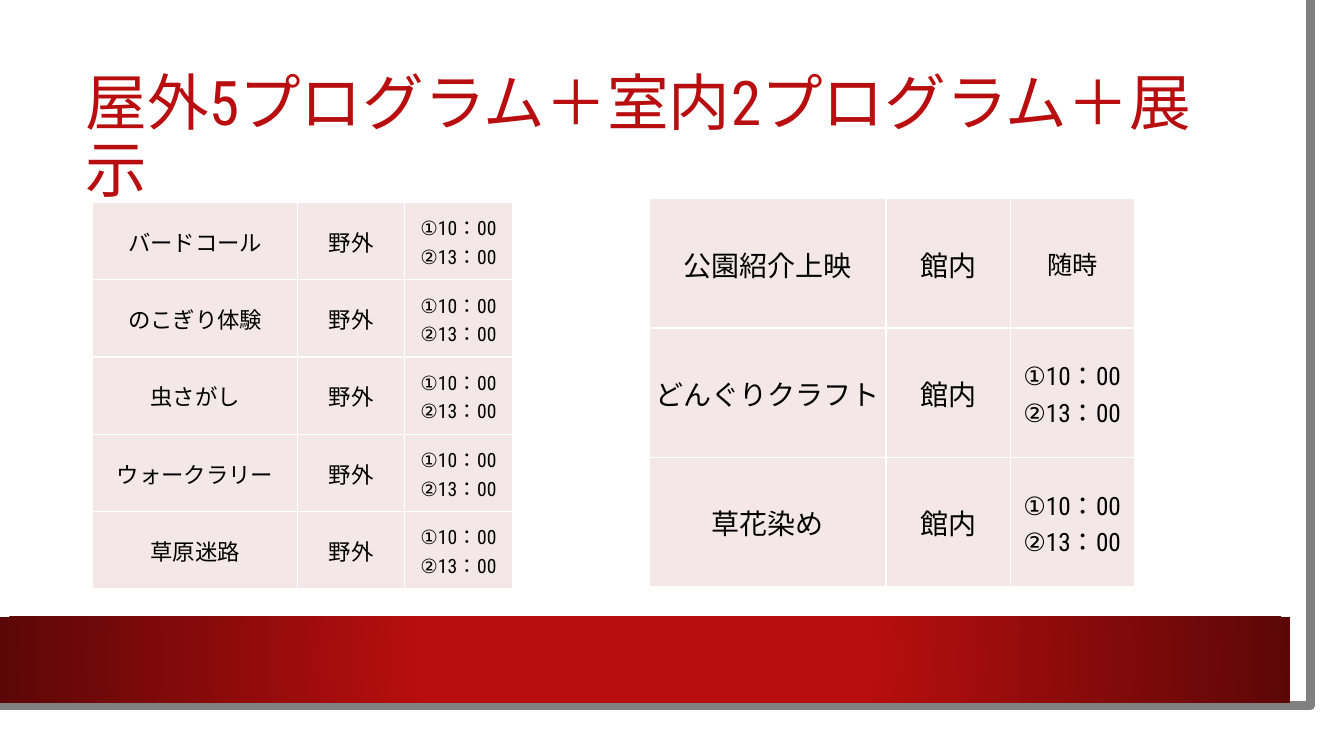
import pptx
import pptx.util
import pptx.dml.color
import pptx.enum.lang
import pptx.enum.shapes
import pptx.enum.text
import pptx.oxml
import pptx.oxml.ns
import lxml.etree

LATIN_FONT = "Roboto Condensed"
JAPANESE_FONT = "Noto Sans CJK JP"
RED, DARK_RED, GRAY = "B80E0F", "5C0707", "808080"
CELL_FILL, WHITE, BLACK = "F3E7E7", "FFFFFF", "000000"
COLUMN_SHARES = (0.488, 0.256, 0.256)
TIMES = "①10：00\v②13：00"
OUTDOOR = [
    (name, "野外", TIMES)
    for name in ("バードコール", "のこぎり体験", "虫さがし", "ウォークラリー", "草原迷路")
]
INDOOR = [
    ("公園紹介上映", "館内", "随時"),
    ("どんぐりクラフト", "館内", TIMES),
    ("草花染め", "館内", TIMES),
]


def inches(*lengths):
    return [pptx.util.Inches(length) for length in lengths]


def color(value):
    return pptx.dml.color.RGBColor.from_string(value)


def format_runs(paragraph, size, font_name, font_color):
    for run in paragraph.runs:
        run.font.size = pptx.util.Pt(size)
        run.font.name = font_name
        run.font.color.rgb = color(font_color)
        run.font.language_id = pptx.enum.lang.MSO_LANGUAGE_ID.JAPANESE
        latin = run.font._element.find(pptx.oxml.ns.qn("a:latin"))
        east_asian = lxml.etree.Element(pptx.oxml.ns.qn("a:ea"), typeface=JAPANESE_FONT)
        latin.addnext(east_asian)


def add_rectangle(slide, box):
    shape = slide.shapes.add_shape(
        pptx.enum.shapes.MSO_SHAPE.RECTANGLE, *inches(*box)
    )
    shape.shadow.inherit = False
    shape.line.fill.background()
    return shape


def add_paper(slide, box):
    paper = add_rectangle(slide, box)
    paper.fill.solid()
    paper.fill.fore_color.rgb = color(WHITE)


def add_paper_edge(slide, box):
    left, top, width, height = box
    right, bottom = left + width, top + height
    builder = slide.shapes.build_freeform(right - 0.03, top, scale=914400)
    builder.add_line_segments([(right, bottom), (left, bottom - 0.01)], close=False)
    edge = builder.convert_to_shape()
    edge.shadow.inherit = False
    edge.fill.background()
    edge.line.color.rgb = color(GRAY)
    edge.line.width = pptx.util.Pt(6.5)


def add_band(slide, box):
    band = add_rectangle(slide, box)
    band.fill.gradient()
    stops = ((0.34, RED), (1, DARK_RED))
    for stop, (position, value) in zip(band.fill.gradient_stops, stops):
        stop.position = position
        stop.color.rgb = color(value)
    linear = band._element.spPr.find(".//" + pptx.oxml.ns.qn("a:lin"))
    radial = pptx.oxml.parse_xml(
        f'<a:path {pptx.oxml.ns.nsdecls("a")} path="circle">'
        '<a:fillToRect l="50000" t="50000" r="50000" b="50000"/></a:path>'
    )
    linear.getparent().replace(linear, radial)


def add_title(slide, box, text):
    title = slide.shapes.add_textbox(*inches(*box))
    frame = title.text_frame
    frame.word_wrap = True
    frame.vertical_anchor = pptx.enum.text.MSO_ANCHOR.MIDDLE
    frame.text = text
    paragraph = frame.paragraphs[0]
    paragraph.line_spacing = 0.9
    format_runs(paragraph, 44, LATIN_FONT, RED)


def add_borders(cell):
    properties = cell._tc.get_or_add_tcPr()
    for index, side in enumerate(("lnL", "lnR", "lnT", "lnB")):
        border = pptx.oxml.parse_xml(
            f'<a:{side} {pptx.oxml.ns.nsdecls("a")} w="12700"><a:solidFill>'
            f'<a:srgbClr val="{WHITE}"/></a:solidFill></a:{side}>'
        )
        properties.insert(index, border)


def fill_cell(cell, text, size, font_name):
    cell.fill.solid()
    cell.fill.fore_color.rgb = color(CELL_FILL)
    cell.margin_left = cell.margin_right = cell.margin_top = pptx.util.Inches(0.01)
    cell.margin_bottom = 0
    cell.vertical_anchor = pptx.enum.text.MSO_ANCHOR.MIDDLE
    paragraph = cell.text_frame.paragraphs[0]
    paragraph.text = text
    paragraph.alignment = pptx.enum.text.PP_ALIGN.CENTER
    format_runs(paragraph, size, font_name, BLACK)
    add_borders(cell)


def add_program_table(slide, box, programs, name_size, time_size):
    width, height = box[2:]
    table = slide.shapes.add_table(
        len(programs), len(COLUMN_SHARES), *inches(*box)
    ).table
    table.first_row = False
    table.horz_banding = False
    for column, share in zip(table.columns, COLUMN_SHARES):
        column.width = pptx.util.Inches(width * share)
    styles = (
        (name_size, JAPANESE_FONT),
        (name_size, JAPANESE_FONT),
        (time_size, LATIN_FONT),
    )
    for row, program in zip(table.rows, programs):
        row.height = pptx.util.Inches(height / len(programs))
        for cell, text, style in zip(row.cells, program, styles):
            fill_cell(cell, text, *style)


def build_program_slide(presentation):
    slide = presentation.slides.add_slide(presentation.slide_layouts[6])
    add_paper(slide, (0, 0, 13.1, 7.27))
    add_paper_edge(slide, (-0.03, 0, 12.88, 7.02))
    add_band(slide, (0, 6.12, 12.8, 0.85))
    add_title(slide, (0.75, 0.75, 11.37, 1.26), "屋外5プログラム＋室内2プログラム＋展示")
    add_program_table(slide, (0.92, 2.01, 4.16, 3.83), OUTDOOR, 16, 14)
    add_program_table(slide, (6.44, 1.97, 4.81, 3.85), INDOOR, 20, 18)


def main():
    presentation = pptx.Presentation()
    presentation.slide_width, presentation.slide_height = inches(13.33, 7.5)
    build_program_slide(presentation)
    presentation.save("out.pptx")


if __name__ == "__main__":
    main()
